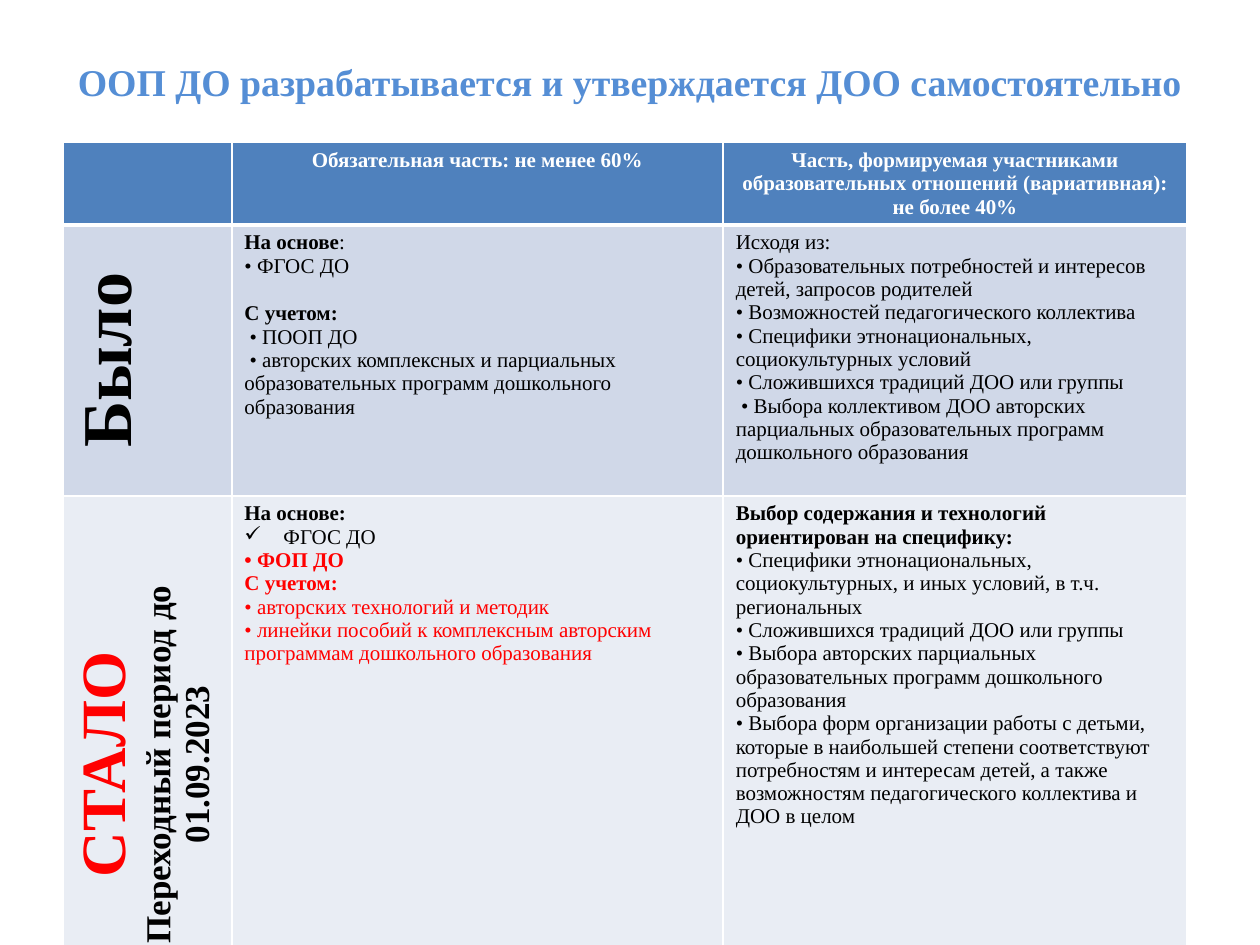
from dataclasses import dataclass
from typing import Optional

from lxml import etree
from pptx import Presentation
from pptx.dml.color import RGBColor
from pptx.enum.text import MSO_ANCHOR, PP_ALIGN
from pptx.oxml.ns import qn
from pptx.util import Inches, Pt

CENTER = PP_ALIGN.CENTER
LEFT = PP_ALIGN.LEFT
MIDDLE = MSO_ANCHOR.MIDDLE


@dataclass(frozen=True)
class Theme:
    font: str = "Times New Roman"
    title: str = "558ED5"
    header: str = "4F81BD"
    before: str = "D0D8E8"
    after: str = "E9EDF4"
    white: str = "FFFFFF"
    black: str = "000000"
    red: str = "FF0000"
    title_size: float = 21.6
    body_size: float = 12
    before_size: float = 40
    after_size: float = 36
    note_size: float = 20
    blank_line: float = 13.8


THEME = Theme()


@dataclass(frozen=True)
class Line:
    text: str
    bold: bool = False
    color: str = THEME.black
    size: float = THEME.body_size
    align: PP_ALIGN = LEFT
    space_before: float = 0
    check_mark: bool = False
    plain_tail: str = ""


@dataclass(frozen=True)
class Row:
    height: float
    fill: str
    cells: tuple[tuple[Line, ...], ...]
    vertical_label: bool = True
    bottom_border: float = 1
    top_border: float = 1


def header(text: str) -> tuple[Line, ...]:
    return (Line(text, True, THEME.white, align=CENTER),)


def label(text: str, size: float, color: str = THEME.black) -> Line:
    return Line(text, True, color, size, CENTER)


COLUMN_WIDTHS = (1.34, 3.9, 3.68)
ROWS = (
    Row(0.63, THEME.header, (
        (),
        header("Обязательная часть: не менее 60%"),
        header("Часть, формируемая участниками образовательных отношений "
               "(вариативная): не более 40%"),
    ), vertical_label=False, bottom_border=3),
    Row(2.15, THEME.before, (
        (label("Было", THEME.before_size),),
        (
            Line("На основе", True, plain_tail=":"),
            Line("• ФГОС ДО"),
            Line("С учетом:", True, space_before=THEME.blank_line),
            Line(" • ПООП ДО"),
            Line(" • авторских комплексных и парциальных образовательных "
                 "программ дошкольного образования"),
        ),
        (
            Line("Исходя из:"),
            Line("• Образовательных потребностей и интересов детей, "
                 "запросов родителей"),
            Line("• Возможностей педагогического коллектива"),
            Line("• Специфики этнонациональных, социокультурных условий"),
            Line("• Сложившихся традиций ДОО или группы"),
            Line(" • Выбора коллективом ДОО авторских парциальных "
                 "образовательных программ дошкольного образования"),
        ),
    ), top_border=3),
    Row(2.88, THEME.after, (
        (
            label("СТАЛО", THEME.after_size, THEME.red),
            label("Переходный период до 01.09.2023", THEME.note_size),
        ),
        (
            Line("На основе:", True),
            Line("ФГОС ДО", check_mark=True),
            Line("• ФОП ДО", True, THEME.red),
            Line("С учетом:", True, THEME.red),
            Line("• авторских технологий и методик", color=THEME.red),
            Line("• линейки пособий к комплексным авторским программам "
                 "дошкольного образования", color=THEME.red),
        ),
        (
            Line("Выбор содержания и технологий ориентирован на специфику:", True),
            Line("• Специфики этнонациональных, социокультурных, и иных "
                 "условий, в т.ч. региональных"),
            Line("• Сложившихся традиций ДОО или группы"),
            Line("• Выбора авторских парциальных образовательных программ "
                 "дошкольного образования"),
            Line("• Выбора форм организации работы с детьми, которые в "
                 "наибольшей степени соответствуют потребностям и интересам "
                 "детей, а также возможностям педагогического коллектива и "
                 "ДОО в целом"),
        ),
    )),
)


def format_run(run, size: float, color: str, bold: bool) -> None:
    run.font.name = THEME.font
    run.font.size = Pt(size)
    run.font.bold = bold
    run.font.color.rgb = RGBColor.from_string(color)


def add_check_mark(paragraph) -> None:
    properties = paragraph._p.get_or_add_pPr()
    indent = Inches(0.31)
    properties.set("marL", str(indent))
    properties.set("indent", str(-indent))
    etree.SubElement(properties, qn("a:buChar")).set("char", "✓")


def write_line(paragraph, line: Line) -> None:
    paragraph.text = line.text
    paragraph.alignment = line.align
    if line.plain_tail:
        paragraph.add_run().text = line.plain_tail
    for index, run in enumerate(paragraph.runs):
        format_run(run, line.size, line.color, line.bold and index == 0)
    if line.space_before:
        paragraph.space_before = Pt(line.space_before)
    if line.check_mark:
        add_check_mark(paragraph)


def set_borders(cell, row: Row) -> None:
    """Put the four border lines ahead of the fill, as the schema requires."""
    properties = cell._tc.get_or_add_tcPr()
    widths = {"L": 1, "R": 1, "T": row.top_border, "B": row.bottom_border}
    for position, (side, width) in enumerate(widths.items()):
        border = etree.Element(qn(f"a:ln{side}"), w=str(Pt(width)))
        fill = etree.SubElement(border, qn("a:solidFill"))
        etree.SubElement(fill, qn("a:srgbClr"), val=THEME.white)
        properties.insert(position, border)


def fill_cell(cell, row: Row, lines: tuple[Line, ...],
              direction: Optional[str] = None) -> None:
    cell.fill.solid()
    cell.fill.fore_color.rgb = RGBColor.from_string(row.fill)
    set_borders(cell, row)
    if direction:
        cell._tc.get_or_add_tcPr().set("vert", direction)
    frame = cell.text_frame
    for index, line in enumerate(lines):
        write_line(frame.add_paragraph() if index else frame.paragraphs[0], line)


def add_title(slide, text: str) -> None:
    title = slide.shapes.title
    title.left, title.top = Inches(0.5), Inches(0.3)
    title.width, title.height = Inches(9), Inches(0.69)
    title.text_frame.text = text
    title.text_frame.vertical_anchor = MIDDLE
    paragraph = title.text_frame.paragraphs[0]
    paragraph.alignment = CENTER
    format_run(paragraph.runs[0], THEME.title_size, THEME.title, True)


def add_comparison(slide) -> None:
    table = slide.shapes.add_table(
        len(ROWS), len(COLUMN_WIDTHS), Inches(0.5), Inches(1.13),
        Inches(sum(COLUMN_WIDTHS)), Inches(sum(row.height for row in ROWS))).table
    for column, width in zip(table.columns, COLUMN_WIDTHS):
        column.width = Inches(width)
    for row_index, row in enumerate(ROWS):
        table.rows[row_index].height = Inches(row.height)
        for column_index, lines in enumerate(row.cells):
            is_label = row.vertical_label and column_index == 0
            fill_cell(table.cell(row_index, column_index), row, lines,
                      "vert270" if is_label else None)


def main() -> None:
    presentation = Presentation()
    presentation.slide_width, presentation.slide_height = Inches(10), Inches(7.5)
    slide = presentation.slides.add_slide(presentation.slide_layouts[5])
    add_title(slide, "ООП ДО разрабатывается и утверждается ДОО самостоятельно")
    add_comparison(slide)
    presentation.save("out.pptx")


if __name__ == "__main__":
    main()
